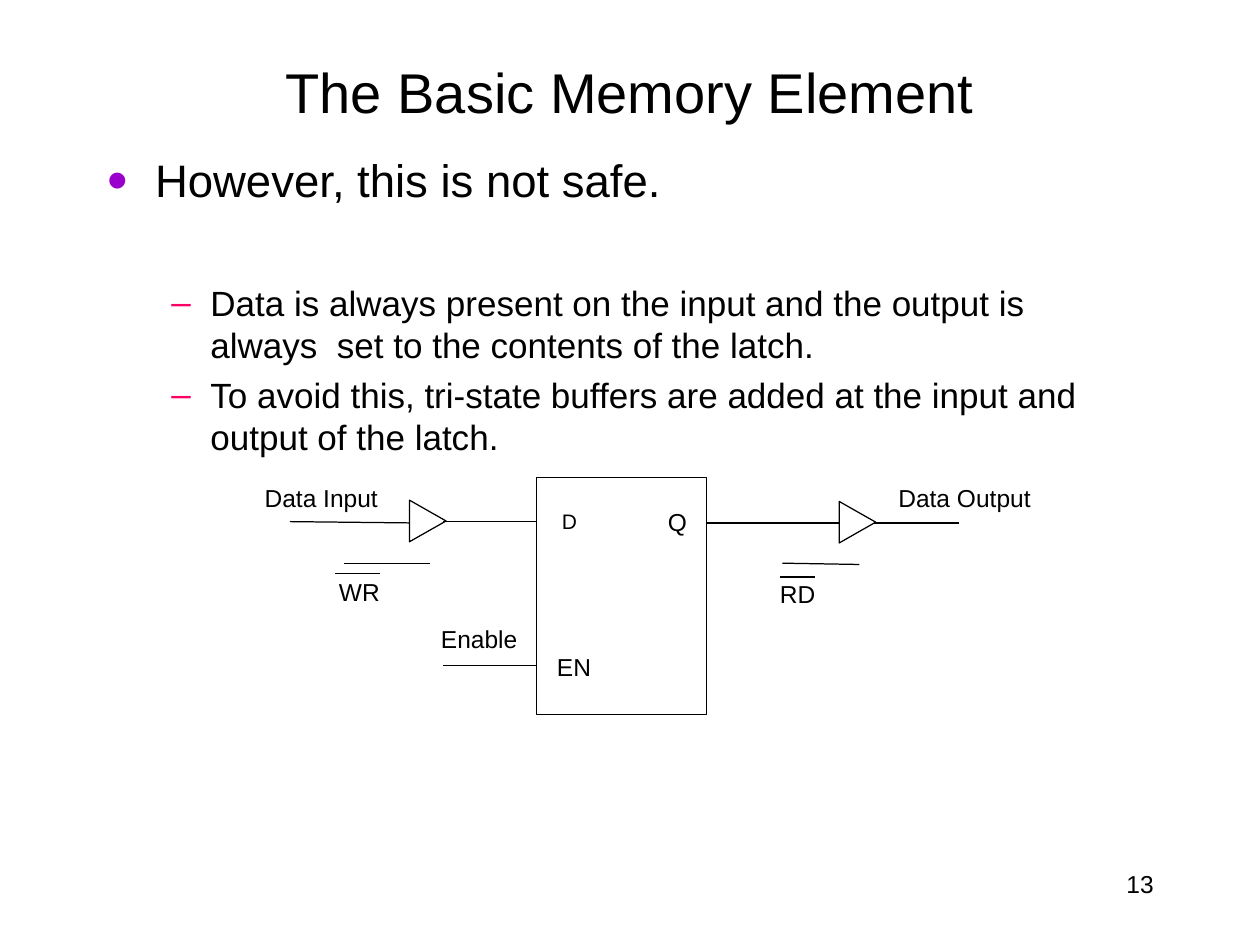
"""Build the slide on the basic memory element with tri-state buffers."""
import lxml.etree
import pptx
import pptx.dml.color
import pptx.enum.shapes
import pptx.enum.text
import pptx.oxml.ns
import pptx.util
from pptx.util import Inches

THEME = {
    "font": "Arial",
    "ink": pptx.dml.color.RGBColor.from_string("000000"),
    "bullet": "9900CC",
    "dash": "FF0066",
    "title": 32,
    "lead": 26,
    "point": 20,
    "label": 14,
    "pin": 12,
    "line": 0.72,
}


def write_text(frame, text, size, paragraph=None, align="LEFT", anchor="MIDDLE", wrap=False, inset=0, before=0):
    frame.margin_left = frame.margin_right = frame.margin_bottom = 0
    frame.margin_top = Inches(inset)
    frame.word_wrap = wrap
    frame.auto_size = pptx.enum.text.MSO_AUTO_SIZE.NONE
    frame.vertical_anchor = getattr(pptx.enum.text.MSO_ANCHOR, anchor)
    paragraph = paragraph or frame.paragraphs[0]
    paragraph.alignment = getattr(pptx.enum.text.PP_ALIGN, align)
    paragraph.space_before = pptx.util.Pt(before)
    run = paragraph.add_run()
    run.text = text
    run.font.name = THEME["font"]
    run.font.size = pptx.util.Pt(size)
    run.font.color.rgb = THEME["ink"]


def add_bullet(paragraph, character, color, percent, margin, indent):
    properties = paragraph._p.get_or_add_pPr()
    properties.set("marL", str(Inches(margin)))
    properties.set("indent", str(Inches(indent)))
    qn = pptx.oxml.ns.qn
    bullet_color = lxml.etree.SubElement(properties, qn("a:buClr"))
    lxml.etree.SubElement(bullet_color, qn("a:srgbClr"), val=color)
    lxml.etree.SubElement(properties, qn("a:buSzPct"), val=str(percent * 1000))
    lxml.etree.SubElement(properties, qn("a:buFont"), typeface=THEME["font"])
    lxml.etree.SubElement(properties, qn("a:buChar"), char=character)


presentation = pptx.Presentation()
presentation.slide_width = Inches(10)
presentation.slide_height = Inches(7.5)
slide = presentation.slides.add_slide(presentation.slide_layouts[5])

title = slide.shapes.title
title.left, title.top, title.width, title.height = [Inches(n) for n in (2.26, 0.44, 5.48, 0.56)]
write_text(title.text_frame, "The Basic Memory Element", THEME["title"], align="CENTER")

body = slide.shapes.add_textbox(Inches(0.84), Inches(1.19), Inches(8.22), Inches(2.45))
lead = ("•", THEME["bullet"], 129, 0.39, -0.38)
point = ("–", THEME["dash"], 100, 0.83, -0.31)
points = [
    ("However, this is not safe.", THEME["lead"], lead, 0),
    ("Data is always present on the input and the output is always  set to the contents of the latch.",
     THEME["point"], point, 42.4),
    ("To avoid this, tri-state buffers are added at the input and  output of the latch.",
     THEME["point"], point, 4.8),
]
for index, (text, size, bullet, before) in enumerate(points):
    paragraph = body.text_frame.add_paragraph() if index else body.text_frame.paragraphs[0]
    add_bullet(paragraph, *bullet)
    write_text(body.text_frame, text, size, paragraph=paragraph, anchor="TOP", wrap=True, inset=0.02, before=before)

latch = slide.shapes.add_shape(
    pptx.enum.shapes.MSO_SHAPE.RECTANGLE, Inches(4.26), Inches(3.79), Inches(1.35), Inches(1.88))
outlines = [latch]
for left, top in [(3.25, 3.97), (6.66, 3.98)]:
    builder = slide.shapes.build_freeform(Inches(left), Inches(top))
    builder.add_line_segments(
        [(Inches(left + 0.29), Inches(top + 0.165)), (Inches(left), Inches(top + 0.33))], close=True)
    outlines.append(builder.convert_to_shape())
for shape in outlines:
    shape.shadow.inherit = False
    shape.fill.background()

wires = [
    (2.3, 4.14, 3.25, 4.15),
    (3.52, 4.14, 4.26, 4.14),
    (5.6, 4.15, 6.66, 4.15),
    (6.94, 4.15, 7.61, 4.15),
    (3.52, 5.28, 4.26, 5.28),
    (2.73, 4.47, 3.41, 4.47),
    (6.21, 4.47, 6.82, 4.48),
]
overbars = [(2.66, 4.55, 3.02, 4.55), (6.19, 4.58, 6.47, 4.58)]
for ends in wires + overbars:
    connector = slide.shapes.add_connector(
        pptx.enum.shapes.MSO_CONNECTOR.STRAIGHT, *[Inches(end) for end in ends])
    lxml.etree.SubElement(connector._element.spPr, pptx.oxml.ns.qn("a:effectLst"))
    outlines.append(connector)
for shape in outlines:
    shape.line.color.rgb = THEME["ink"]
    shape.line.width = pptx.util.Pt(THEME["line"])

labels = [
    ("Data Input", 2.1, 3.95, 0.92, "label"),
    ("Data Output", 7.13, 3.95, 1.07, "label"),
    ("D", 4.46, 4.14, 0.15, "pin"),
    ("Q", 5.3, 4.14, 0.17, "label"),
    ("Enable", 3.5, 5.07, 0.63, "label"),
    ("EN", 4.42, 5.29, 0.29, "label"),
    ("WR", 2.69, 4.7, 0.36, "label"),
    ("RD", 6.19, 4.71, 0.31, "label"),
    ("13", 8.94, 7.01, 0.24, "label"),
]
label_height = 0.26
for text, left, middle, width, size in labels:
    label = slide.shapes.add_textbox(
        Inches(left), Inches(middle - label_height / 2), Inches(width), Inches(label_height))
    write_text(label.text_frame, text, THEME[size])

presentation.save("out.pptx")
